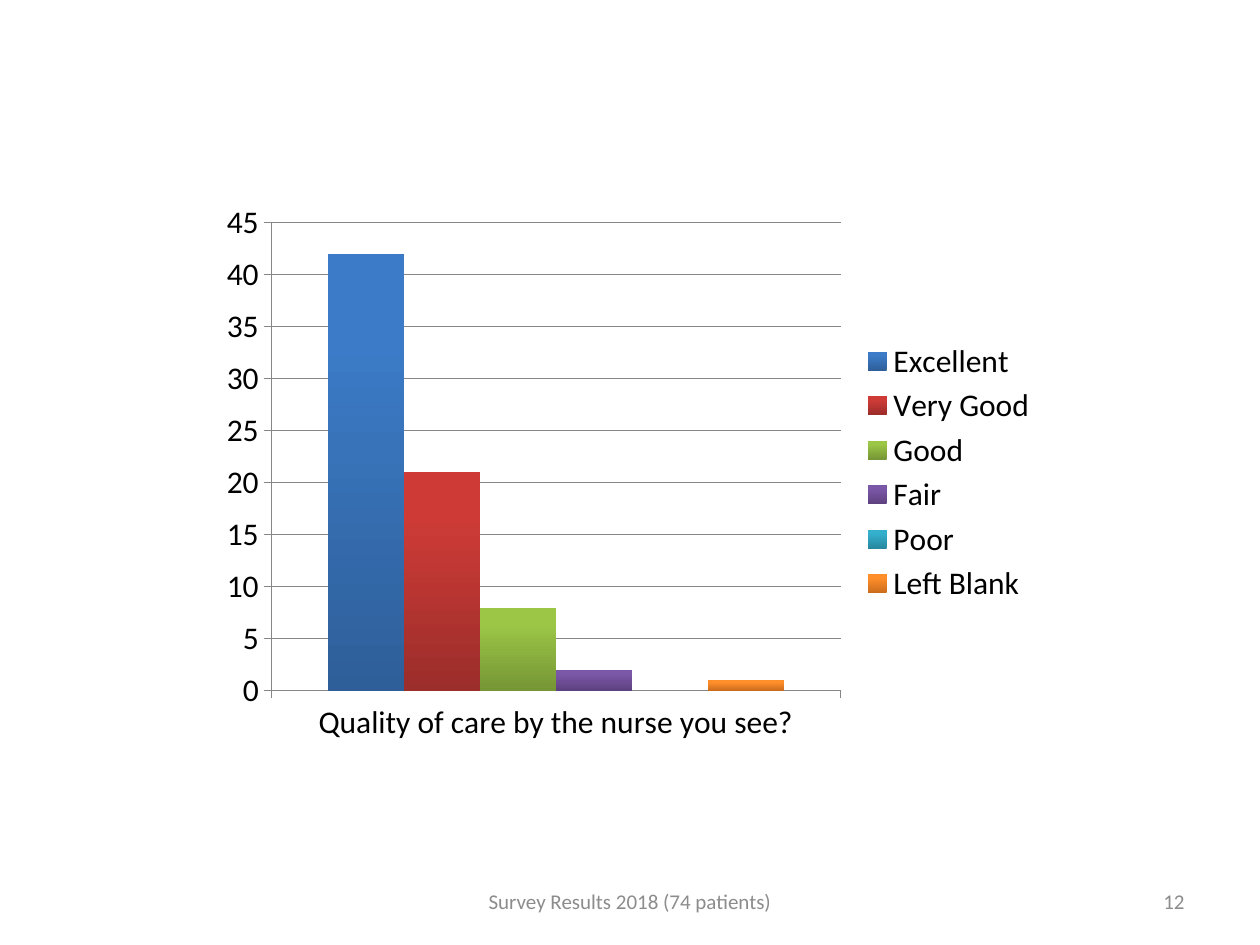
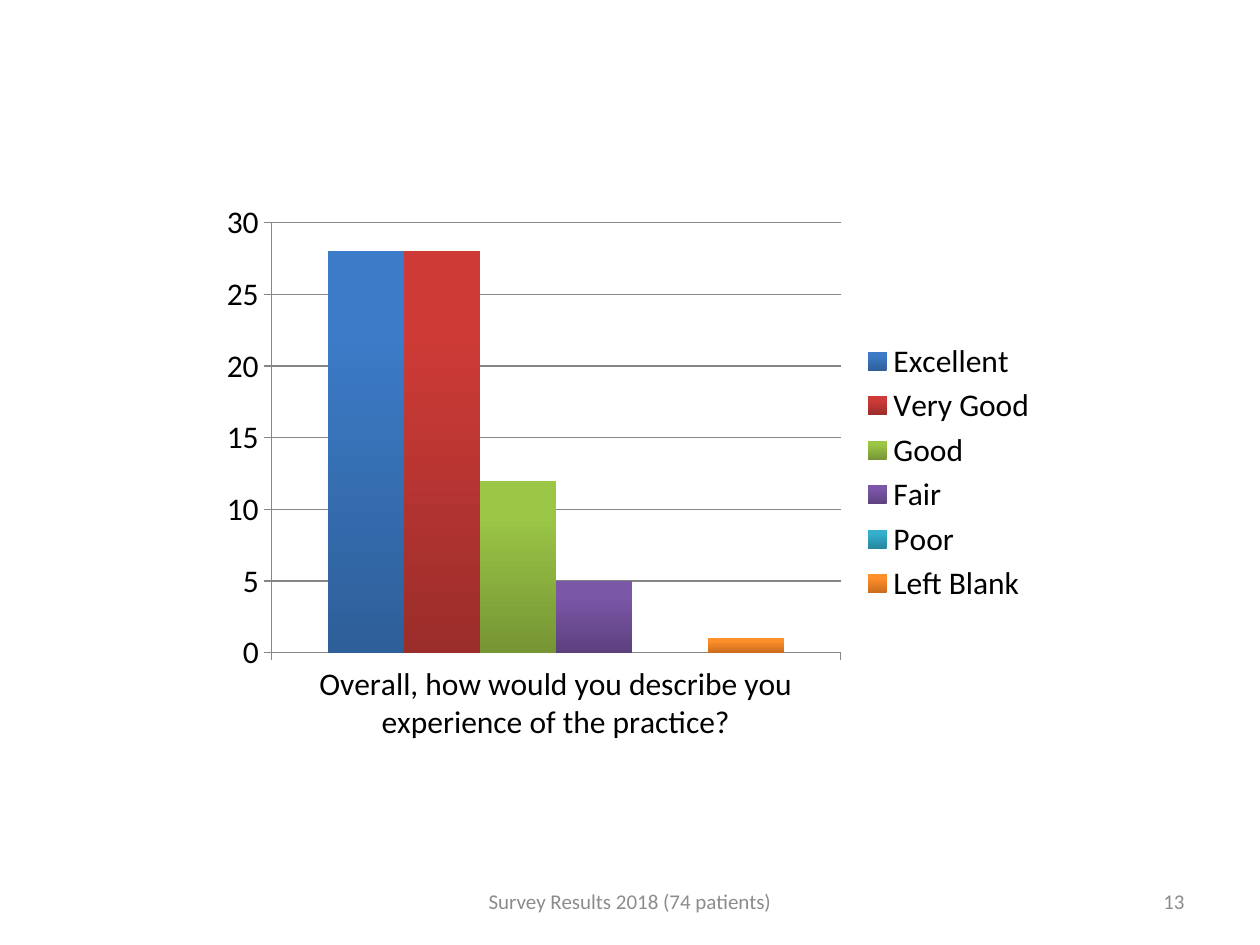
"""Build two survey result slides, each with a column chart and a footer."""
from pptx import Presentation
from pptx.chart.data import CategoryChartData
from pptx.dml.color import RGBColor
from pptx.enum.chart import XL_CHART_TYPE, XL_LEGEND_POSITION, XL_TICK_MARK
from pptx.enum.text import MSO_ANCHOR, PP_ALIGN
from pptx.util import Pt

COLUMN = XL_CHART_TYPE.COLUMN_CLUSTERED
RIGHT_SIDE = XL_LEGEND_POSITION.RIGHT
OUTSIDE = XL_TICK_MARK.OUTSIDE
MIDDLE = MSO_ANCHOR.MIDDLE
CENTER, RIGHT = PP_ALIGN.CENTER, PP_ALIGN.RIGHT

FONT = "Calibri"
BLACK, GREY, RULE = "000000", "8C8C8C", "868686"
FOOTER = "Survey Results 2018 (74 patients)"
RATINGS = {
    "Excellent": ("2E5F99", "3C7BC7"),
    "Very Good": ("9B2D2A", "CE3B37"),
    "Good": ("769535", "9BC646"),
    "Fair": ("5D417E", "7B57A8"),
    "Poor": ("2787A0", "34B0CC"),
    "Left Blank": ("CB6C1D", "FF8F2A"),
}
RESULTS = [
    (12, "Quality of care by the nurse you see?", (42, 21, 8, 2, 0, 1), 45),
    (13, "Overall, how would you describe you experience of the practice?",
     (28, 28, 12, 5, 0, 1), 30),
]


def color(code):
    """Turn a hex string into a colour."""
    return RGBColor.from_string(code)


def style(font, size, code):
    """Set the face, size and colour of a font."""
    font.name = FONT
    font.size = Pt(size)
    font.color.rgb = color(code)


def shade(fill, pair):
    """Fill upwards from the dark colour to the light one."""
    fill.gradient()
    fill.gradient_angle = 90
    for stop, code, place in zip(fill.gradient_stops, pair, (0, 0.8)):
        stop.color.rgb = color(code)
        stop.position = place


def rule(line):
    """Draw a thin grey chart line."""
    line.color.rgb = color(RULE)
    line.width = Pt(0.75)


def add_label(slide, text, left, width, align):
    """Add a grey label to the footer row."""
    box = slide.shapes.add_textbox(Pt(left), Pt(500.5), Pt(width), Pt(28.75))
    frame = box.text_frame
    frame.word_wrap = True
    frame.vertical_anchor = MIDDLE
    frame.text = text
    line = frame.paragraphs[0]
    line.alignment = align
    style(line.runs[0].font, 12, GREY)


def add_columns(slide, question, counts, top):
    """Add the column chart of the answers to one question."""
    data = CategoryChartData()
    data.categories = [question]
    for name, count in zip(RATINGS, counts):
        data.add_series(name, [count])
    chart = slide.shapes.add_chart(
        COLUMN, Pt(120), Pt(110), Pt(480), Pt(320), data).chart
    style(chart.font, 18, BLACK)
    chart.has_title = False
    chart.has_legend = True
    chart.legend.position = RIGHT_SIDE
    chart.legend.include_in_layout = False
    plot = chart.plots[0]
    plot.gap_width = 150
    plot.overlap = 0
    plot.vary_by_categories = False
    for series, pair in zip(plot.series, RATINGS.values()):
        shade(series.format.fill, pair)
    for axis in (chart.category_axis, chart.value_axis):
        axis.major_tick_mark = OUTSIDE
        rule(axis.format.line)
    scale = chart.value_axis
    scale.minimum_scale, scale.maximum_scale, scale.major_unit = 0, top, 5
    scale.has_major_gridlines = True
    rule(scale.major_gridlines.format.line)


def main():
    """Build and save the deck."""
    deck = Presentation()
    deck.slide_width, deck.slide_height = Pt(720), Pt(540)
    for number, question, counts, top in RESULTS:
        slide = deck.slides.add_slide(deck.slide_layouts[6])
        add_columns(slide, question, counts, top)
        add_label(slide, str(number), 516, 168, RIGHT)
        add_label(slide, FOOTER, 246, 228, CENTER)
    deck.save("out.pptx")


if __name__ == "__main__":
    main()
